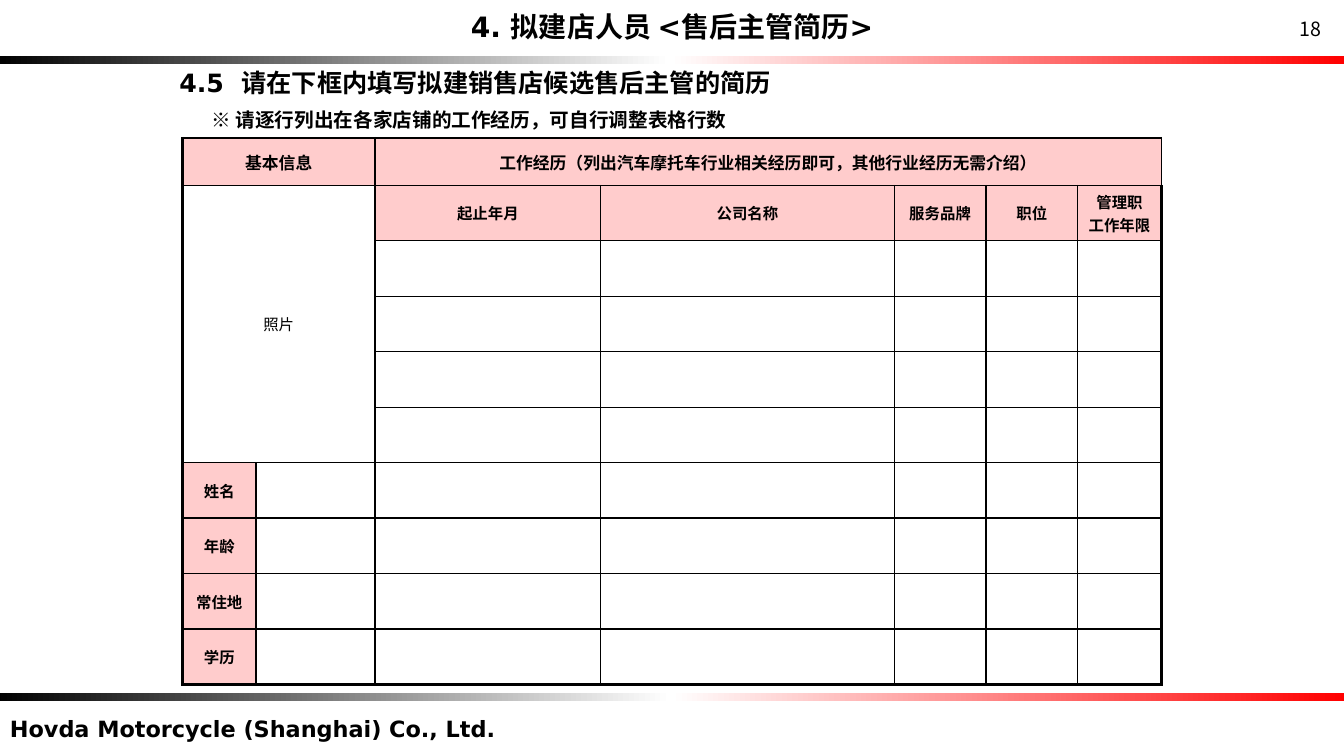
"""Build the after-sales manager résumé form slide."""
from copy import deepcopy

from lxml import etree
from pptx import Presentation
from pptx.dml.color import RGBColor
from pptx.enum import shapes, text
from pptx.oxml.ns import qn
from pptx.util import Inches, Pt

COLORS = {"ink": "000000", "paper": "FFFFFF", "red": "FF0000", "pink": "FFCCCC"}
LATIN, CJK = "DejaVu Sans", "Noto Sans CJK JP"
MIDDLE, CENTER = text.MSO_ANCHOR.MIDDLE, text.PP_ALIGN.CENTER

BAND_SPOTS = [(-0.05, 0.56), (-0.04, 6.87)]
BAND_SIZE = (13.39, 0.08)
BAND_STOPS = [(0, "ink"), (0.5, "paper"), (1, "red")]

CAPTIONS = [
    ("Hovda Motorcycle (Shanghai) Co., Ltd.", (0, 7.05, 7.39, 0.37),
     dict(size=16, grow=True)),
    ("18", (12.67, 0.12, 0.66, 0.34),
     dict(size=14, bold=False, font=CJK, align=CENTER, grow=True)),
    ("4. 拟建店人员 <售后主管简历>", (3.81, 0.1, 5.71, 0.33),
     dict(size=20, align=CENTER, anchor=MIDDLE)),
    ("4.5  请在下框内填写拟建销售店候选售后主管的简历", (1.68, 0.62, 6.3, 0.4),
     dict(size=18, anchor=MIDDLE, grow=True, wrap=False)),
    ("※ 请逐行列出在各家店铺的工作经历，可自行调整表格行数", (2, 1.02, 5.37, 0.34),
     dict(size=14, anchor=MIDDLE, grow=True, wrap=False)),
]

FORM_SPOT = (1.81, 1.37)
COLUMNS = [0.73, 1.18, 2.24, 2.91, 0.91, 0.91, 0.83]
ROWS = [0.47] + [0.55] * 9
MERGES = [((0, 0), (0, 1)), ((0, 2), (0, 6)), ((1, 0), (5, 1))]
SECTIONS = {0: "基本信息", 2: "工作经历（列出汽车摩托车行业相关经历即可，其他行业经历无需介绍）"}
CAREER_FIELDS = ["起止年月", "公司名称", "服务品牌", "职位", "管理职\n工作年限"]
PERSON_FIELDS = ["姓名", "年龄", "常住地", "学历"]
PHOTO = "照片"
TIGHT_LABELS = [*SECTIONS.values(), "服务品牌"]
THIN, THICK = 1, 2.25


def rgb(name):
    return RGBColor.from_string(COLORS[name])


def write(frame, words, size=11, bold=True, font=LATIN, align=None):
    frame.text = words
    for paragraph in frame.paragraphs:
        if align is not None:
            paragraph.alignment = align
        for run in paragraph.runs:
            run.font.size, run.font.bold, run.font.name = Pt(size), bold, font
            run.font.color.rgb = rgb("ink")


def add_caption(slide, words, place, anchor=text.MSO_ANCHOR.TOP, grow=False,
                wrap=True, **style):
    frame = slide.shapes.add_textbox(*map(Inches, place)).text_frame
    write(frame, words, **style)
    frame.word_wrap, frame.vertical_anchor = wrap, anchor
    if grow:
        frame.auto_size = text.MSO_AUTO_SIZE.SHAPE_TO_FIT_TEXT


def add_band(slide, spot):
    band = slide.shapes.add_shape(shapes.MSO_SHAPE.RECTANGLE,
                                  *map(Inches, spot + BAND_SIZE))
    band.shadow.inherit = False
    band.line.fill.background()
    band.fill.gradient()
    band.fill.gradient_angle = 0
    stop_list = next(band._element.iter(qn("a:gsLst")))
    stop_list.append(deepcopy(stop_list[0]))
    for stop, (position, color) in zip(band.fill.gradient_stops, BAND_STOPS):
        stop.position, stop.color.rgb = position, rgb(color)


def add_borders(cell, row, column):
    outer = {"L": column == 0, "R": column == len(COLUMNS) - 1,
             "T": row == 0, "B": row == len(ROWS) - 1}
    properties = cell._tc.get_or_add_tcPr()
    for side, on_edge in outer.items():
        width = Pt(THICK if on_edge else THIN)
        border = etree.SubElement(properties, qn(f"a:ln{side}"), w=str(width))
        solid = etree.SubElement(border, qn("a:solidFill"))
        etree.SubElement(solid, qn("a:srgbClr"), val=COLORS["ink"])


def add_form(slide):
    labels = {(0, column): words for column, words in SECTIONS.items()}
    labels |= {(1, column): words for column, words in enumerate(CAREER_FIELDS, 2)}
    labels |= {(row, 0): words for row, words in enumerate(PERSON_FIELDS, 6)}
    labels[1, 0] = PHOTO

    size = (sum(COLUMNS), sum(ROWS))
    form = slide.shapes.add_table(len(ROWS), len(COLUMNS),
                                  *map(Inches, FORM_SPOT + size)).table
    form.first_row = form.horz_banding = False
    for column, width in zip(form.columns, COLUMNS):
        column.width = Inches(width)
    for row, height in zip(form.rows, ROWS):
        row.height = Inches(height)
    for first, last in MERGES:
        form.cell(*first).merge(form.cell(*last))

    for row in range(len(ROWS)):
        for column in range(len(COLUMNS)):
            cell = form.cell(row, column)
            words = labels.get((row, column))
            add_borders(cell, row, column)
            cell.fill.background()
            if words is None:
                continue
            cell.vertical_anchor = MIDDLE
            write(cell.text_frame, words, size=12 if row == 0 else 11,
                  bold=words != PHOTO, align=CENTER)
            if words != PHOTO:
                cell.fill.solid()
                cell.fill.fore_color.rgb = rgb("pink")
            if words in TIGHT_LABELS:
                cell.margin_left = cell.margin_right = Inches(0.02)
                cell.margin_top = cell.margin_bottom = Inches(0.02)


def main():
    deck = Presentation()
    deck.slide_width, deck.slide_height = Inches(13.33), Inches(7.5)
    slide = deck.slides.add_slide(deck.slide_layouts[6])
    for spot in BAND_SPOTS:
        add_band(slide, spot)
    for words, place, style in CAPTIONS:
        add_caption(slide, words, place, **style)
    add_form(slide)
    deck.save("out.pptx")


if __name__ == "__main__":
    main()
